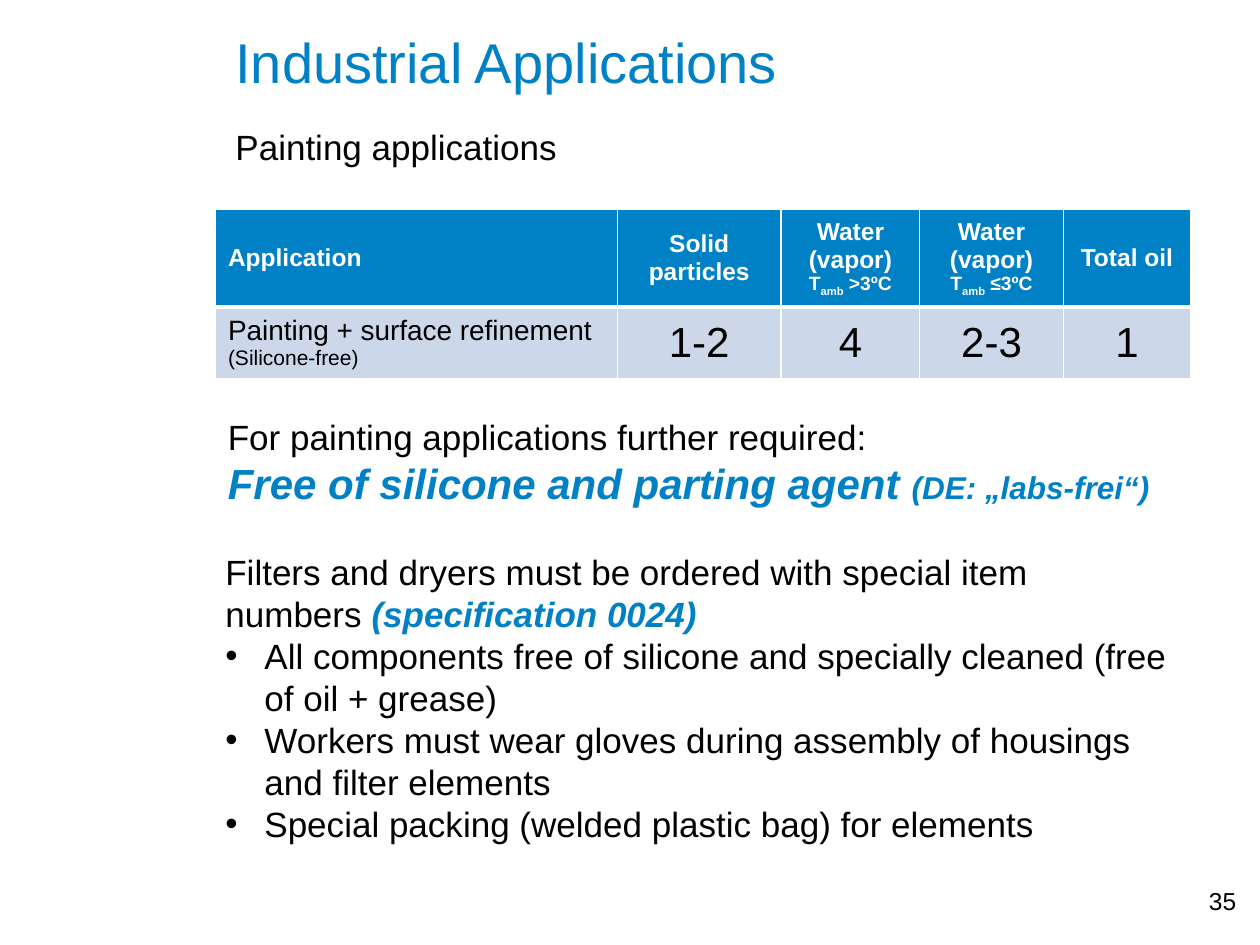
"""Build the slide on compressed air quality for painting applications."""
import pptx
import pptx.dml.color
import pptx.enum.text
import pptx.oxml
import pptx.oxml.ns
import pptx.util
from pptx.util import Inches

BLUE, PALE, WHITE, BLACK = "0081C6", "CCD8EA", "FFFFFF", "000000"
ALIGN = pptx.enum.text.PP_ALIGN
MIDDLE = pptx.enum.text.MSO_ANCHOR.MIDDLE


def rgb(code):
    return pptx.dml.color.RGBColor.from_string(code)


def write(frame, lines, align=ALIGN.LEFT):
    frame.word_wrap = True
    for i, (size, color, bold, runs) in enumerate(lines):
        para = frame.paragraphs[0] if i == 0 else frame.add_paragraph()
        para.alignment = align
        if len(lines) > 3 and i > 0:
            props = para._p.get_or_add_pPr()
            props.set("marL", str(Inches(0.31)))
            props.set("indent", str(-Inches(0.31)))
            for mark in ('buFont {} typeface="Arial"', 'buChar {} char="•"'):
                space = pptx.oxml.ns.nsdecls("a")
                props.append(pptx.oxml.parse_xml(f"<a:{mark.format(space)}/>"))
        para.font.name = "Arial"
        para.font.size = pptx.util.Pt(size)
        para.font.color.rgb = rgb(color)
        para.font.bold = bold
        for text in runs:
            para.add_run().text = text
    return frame.paragraphs


deck = pptx.Presentation()
deck.slide_width, deck.slide_height = Inches(10), Inches(7.5)
slide = deck.slides.add_slide(deck.slide_layouts[6])

need = "For painting applications further required:"
free = ["Free of silicone and parting agent ", "(DE: „labs-frei“)"]
order = ["Filters and dryers must be ordered with special item numbers ", "(specification 0024)"]
points = [
    "All components free of silicone and specially cleaned (free of oil + grease)",
    "Workers must wear gloves during assembly of housings and filter elements",
    "Special packing (welded plastic bag) for elements",
]
rules = [(20, BLACK, False, order)] + [(20, BLACK, False, [point]) for point in points]
boxes = {
    "title": (1.77, 0.17, 7.48, 0.75, [(32, BLUE, False, ["Industrial Applications"])]),
    "topic": (1.77, 0.95, 4.25, 0.44, [(20, BLACK, False, ["Painting applications"])]),
    "number": (7.58, 6.98, 2.33, 0.52, [(14, BLACK, False, ["35"])]),
    "need": (1.71, 3.25, 7.72, 0.84, [(20, BLACK, False, [need]), (24, BLUE, True, free)]),
    "order": (1.69, 4.32, 7.72, 2.46, rules),
}
paras = {}
for name, (left, top, width, height, lines) in boxes.items():
    box = slide.shapes.add_textbox(Inches(left), Inches(top), Inches(width), Inches(height))
    paras[name] = write(box.text_frame, lines, ALIGN.RIGHT if name == "number" else ALIGN.LEFT)

paras["need"][1].font.italic = True
paras["need"][1].runs[1].font.size = pptx.util.Pt(18)
code = paras["order"][0].runs[1].font
code.bold = code.italic = True
code.color.rgb = rgb(BLUE)

water = (14, WHITE, True, ["Water (vapor)"])
heads = [
    [(14, WHITE, True, ["Application"])],
    [(14, WHITE, True, ["Solid particles"])],
    [water, (11, WHITE, True, ["T", "amb", " >3ºC"])],
    [water, (11, WHITE, True, ["T", "amb", " ≤3ºC"])],
    [(14, WHITE, True, ["Total oil"])],
]
paint = [
    (16, BLACK, False, ["Painting + surface refinement"]),
    (12, BLACK, False, ["(Silicone-free)"]),
]
grades = [[(24, BLACK, False, [grade])] for grade in ("1-2", "4", "2-3", "1")]
rows = [heads, [paint] + grades]

table = slide.shapes.add_table(2, 5, Inches(1.71), Inches(1.66), Inches(7.74), Inches(1.32)).table
for column, width in zip(table.columns, (3.19, 1.3, 1.1, 1.14, 1.01)):
    column.width = Inches(width)
for row, height in zip(table.rows, (0.77, 0.55)):
    row.height = Inches(height)

for r, row in enumerate(rows):
    for c, lines in enumerate(row):
        cell = table.cell(r, c)
        cell.vertical_anchor = MIDDLE
        props = cell._tc.get_or_add_tcPr()
        for side in "LRTB":
            thick = 3 if (r, side) in ((0, "B"), (1, "T")) else 1
            props.append(pptx.oxml.parse_xml(
                f'<a:ln{side} {pptx.oxml.ns.nsdecls("a")} w="{pptx.util.Pt(thick)}">'
                f'<a:solidFill><a:srgbClr val="{WHITE}"/></a:solidFill></a:ln{side}>'))
        cell.fill.solid()
        cell.fill.fore_color.rgb = rgb(PALE if r else BLUE)
        for para in write(cell.text_frame, lines, ALIGN.CENTER if c else ALIGN.LEFT):
            if len(para.runs) == 3:
                para.runs[1]._r.get_or_add_rPr().set("baseline", "-25000")

deck.save("out.pptx")
